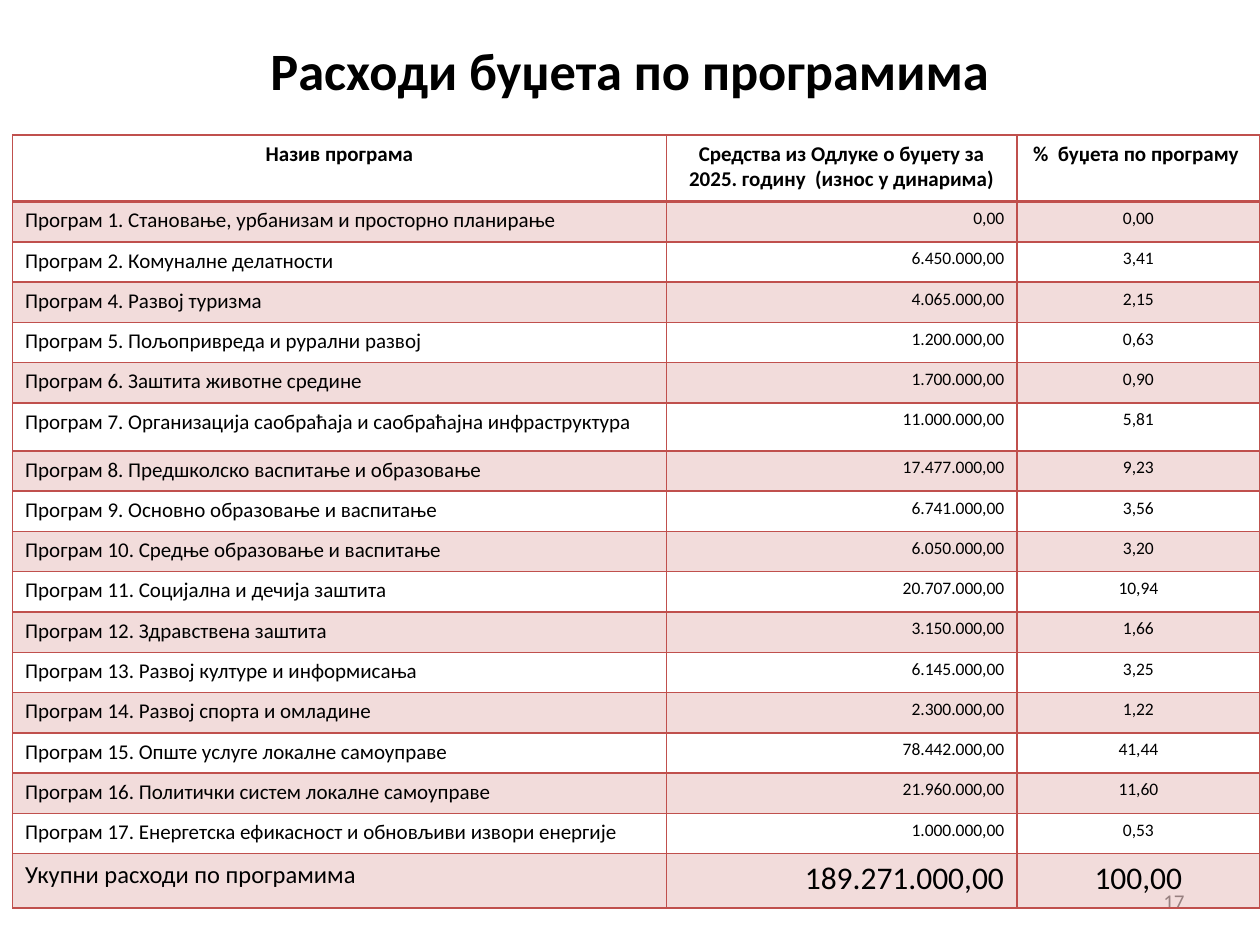
"""Build the slide that lists budget expenditure by programme."""
from lxml import etree
from pptx import Presentation, util as u
from pptx.dml.color import RGBColor
from pptx.enum import text
from pptx.oxml.ns import qn

COLORS = {"ink": "000000", "accent": "C0504D", "number": "8C8C8C"}
FONT = "Calibri"
BAND_OPACITY = 20
ALIGN = text.PP_ALIGN
COLUMNS = [5.19, 2.78, 1.93]
ROW_HEIGHT = 0.32
SPECIAL_HEIGHTS = {0: 0.53, 6: 0.38, 17: 0.43}

HEADER = ("Назив програма",
          "Средства из Одлуке о буџету за 2025. годину  (износ у динарима)",
          "%  буџета по програму ")
PROGRAMS = [
    ("Програм 1. Становање, урбанизам и просторно планирање", "0,00", "0,00"),
    ("Програм 2. Комуналне делатности", "6.450.000,00", "3,41"),
    ("Програм 4. Развој туризма", "4.065.000,00", "2,15"),
    ("Програм 5. Пољопривреда и рурални развој", "1.200.000,00", "0,63"),
    ("Програм 6. Заштита животне средине", "1.700.000,00", "0,90"),
    ("Програм 7. Организација саобраћаја и саобраћајна инфраструктура", "11.000.000,00", "5,81"),
    ("Програм 8. Предшколско васпитање и образовање", "17.477.000,00", "9,23"),
    ("Програм 9. Основно образовање и васпитање", "6.741.000,00", "3,56"),
    ("Програм 10. Средње образовање и васпитање", "6.050.000,00", "3,20"),
    ("Програм 11. Социјална и дечија заштита", "20.707.000,00", "10,94"),
    ("Програм 12. Здравствена заштита", "3.150.000,00", "1,66"),
    ("Програм 13. Развој културе и информисања", "6.145.000,00", "3,25"),
    ("Програм 14. Развој спорта и омладине", "2.300.000,00", "1,22"),
    ("Програм 15. Опште услуге локалне самоуправе", "78.442.000,00", "41,44"),
    ("Програм 16. Политички систем локалне самоуправе", "21.960.000,00", "11,60"),
    ("Програм 17. Енергетска ефикасност и обновљиви извори енергије", "1.000.000,00", "0,53"),
]
TOTAL = ("Укупни расходи по програмима", "189.271.000,00", "100,00")


def write(frame, words, size, align, color="ink", bold=False):
    """Fill a text frame with one formatted paragraph."""
    frame.text = words
    frame.word_wrap = True
    paragraph = frame.paragraphs[0]
    paragraph.alignment = align
    font = paragraph.runs[0].font
    font.name, font.size, font.bold = FONT, u.Pt(size), bold
    font.color.rgb = RGBColor.from_string(COLORS[color])


def add_title(slide, words):
    """Place and format the title placeholder."""
    title = slide.shapes.title
    title.left, title.top, title.width, title.height = map(u.Inches, (0.74, 0.13, 8.52, 0.85))
    write(title.text_frame, words, 30, ALIGN.CENTER, bold=True)
    title.text_frame.vertical_anchor = text.MSO_ANCHOR.MIDDLE


def add_page_number(slide, number):
    """Add the page number at the lower right."""
    box = slide.shapes.add_textbox(*map(u.Inches, (7.17, 6.95, 2.33, 0.4)))
    write(box.text_frame, number, 12, ALIGN.RIGHT, "number")
    box.text_frame.vertical_anchor = text.MSO_ANCHOR.MIDDLE


def fill_band(cell):
    """Tint a cell with the translucent accent colour."""
    cell.fill.solid()
    cell.fill.fore_color.rgb = RGBColor.from_string(COLORS["accent"])
    color = next(cell._tc.tcPr.iter(qn("a:srgbClr")))
    etree.SubElement(color, qn("a:alpha"), val=str(BAND_OPACITY * 1000))


def set_borders(cell, top, bottom):
    """Draw accent borders with the given top and bottom widths."""
    widths = {"a:lnL": 1, "a:lnR": 1, "a:lnT": top, "a:lnB": bottom}
    for position, (tag, width) in enumerate(widths.items()):
        line = etree.Element(qn(tag), w=str(u.Pt(width)))
        fill = etree.SubElement(line, qn("a:solidFill"))
        etree.SubElement(fill, qn("a:srgbClr"), val=COLORS["accent"])
        cell._tc.get_or_add_tcPr().insert(position, line)


def add_budget_table(slide):
    """Add the table with header, programmes and total."""
    rows = [HEADER, *PROGRAMS, TOTAL]
    heights = [SPECIAL_HEIGHTS.get(index, ROW_HEIGHT) for index in range(len(rows))]
    frame = slide.shapes.add_table(len(rows), len(COLUMNS), u.Inches(0.1), u.Inches(1.07),
                                   u.Inches(sum(COLUMNS)), u.Inches(sum(heights)))
    table = frame.table
    table.first_row = table.horz_banding = False
    for column, width in zip(table.columns, COLUMNS):
        column.width = u.Inches(width)
    last = len(rows) - 1
    for index, (values, height) in enumerate(zip(rows, heights)):
        table.rows[index].height = u.Inches(height)
        header = index == 0
        sizes = {0: (12, 12, 12), last: (14, 18, 18)}.get(index, (12, 10, 10))
        aligns = (ALIGN.CENTER,) * 3 if header else (ALIGN.LEFT, ALIGN.RIGHT, ALIGN.CENTER)
        for cell, words, size, align in zip(table.rows[index].cells, values, sizes, aligns):
            write(cell.text_frame, words, size, align, bold=header)
            if index % 2:
                fill_band(cell)
            else:
                cell.fill.background()
            set_borders(cell, 2 if index == 1 else 1, 2 if header else 1)


def main():
    """Create and save the presentation."""
    presentation = Presentation()
    presentation.slide_width, presentation.slide_height = u.Inches(10), u.Inches(7.5)
    slide = presentation.slides.add_slide(presentation.slide_layouts[5])
    add_title(slide, "Расходи буџета по програмима")
    add_page_number(slide, "17")
    add_budget_table(slide)
    presentation.save("out.pptx")


if __name__ == "__main__":
    main()
